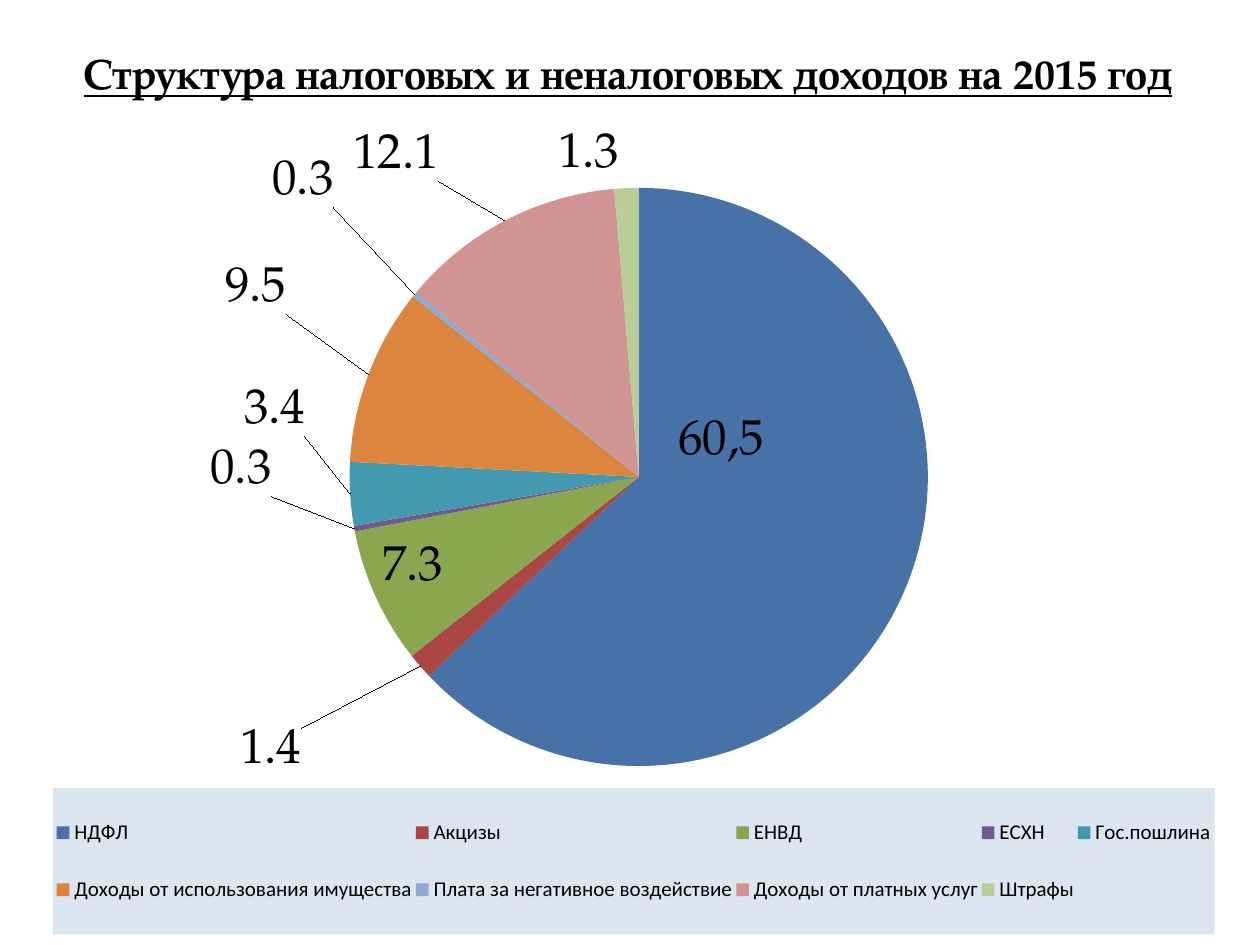
from typing import NamedTuple, Optional

from pptx import Presentation
from pptx.chart.data import CategoryChartData
from pptx.dml.color import RGBColor
from pptx.enum.chart import XL_CHART_TYPE as ChartType
from pptx.enum.chart import XL_LABEL_POSITION as LabelPlace
from pptx.enum.chart import XL_LEGEND_POSITION as LegendPlace
from pptx.enum.text import MSO_ANCHOR as Anchor
from pptx.enum.text import PP_ALIGN as Align
from pptx.oxml import parse_xml
from pptx.oxml.ns import nsdecls, qn
from pptx.util import Inches, Pt

BLACK = RGBColor(0x00, 0x00, 0x00)
BLUE = RGBColor(0x46, 0x72, 0xA8)
RED = RGBColor(0xAA, 0x46, 0x44)
GREEN = RGBColor(0x8A, 0xA6, 0x4F)
PURPLE = RGBColor(0x72, 0x59, 0x90)
TEAL = RGBColor(0x42, 0x99, 0xB0)
ORANGE = RGBColor(0xDC, 0x85, 0x3E)
PALE_BLUE = RGBColor(0x93, 0xA9, 0xD0)
PINK = RGBColor(0xD0, 0x94, 0x93)
PALE_GREEN = RGBColor(0xB9, 0xCD, 0x96)
LEGEND_FILL = RGBColor(0xDC, 0xE6, 0xF1)
SERIF = "TeX Gyre Pagella"
SANS = "Calibri"


class Slice(NamedTuple):
    """One income source; shift moves its label by shares of the chart."""
    name: str
    value: float
    color: RGBColor
    shift: Optional[tuple] = None
    place: LabelPlace = LabelPlace.OUTSIDE_END
    label: Optional[str] = None


SLICES = [
    Slice("НДФЛ", 60.4, BLUE, (-0.04, -0.11), LabelPlace.CENTER, "60,5"),
    Slice("Акцизы", 1.4, RED, (-0.09, 0.07)),
    Slice("ЕНВД", 7.3, GREEN, None, LabelPlace.INSIDE_END),
    Slice("ЕСХН", 0.3, PURPLE, (-0.06, -0.1)),
    Slice("Гос.пошлина", 3.4, TEAL, (-0.03, -0.1)),
    Slice("Доходы от использования имущества", 9.5, ORANGE, (-0.06, -0.07)),
    Slice("Плата за негативное воздействие", 0.3, PALE_BLUE, (-0.06, -0.1)),
    Slice("Доходы от платных услуг", 12.1, PINK, (-0.05, -0.04)),
    Slice("Штрафы", 1.3, PALE_GREEN, (-0.03, 0)),
]


def style_font(font, size: float, name: str) -> None:
    font.size, font.name = Pt(size), name
    font.color.rgb = BLACK


def set_layout(parent, index: int, **settings) -> None:
    """Put a manual layout into a chart part, replacing any other."""
    for old in parent.findall(qn("c:layout")):
        parent.remove(old)
    items = "".join(f'<c:{key} val="{value}"/>' for key, value in settings.items())
    parent.insert(index, parse_xml(
        f'<c:layout {nsdecls("c")}><c:manualLayout>{items}</c:manualLayout></c:layout>'))


def add_title(slide, text: str) -> None:
    box = slide.shapes.add_textbox(Inches(0.16), Inches(0.23), Inches(9.65), Inches(0.69))
    frame = box.text_frame
    frame.word_wrap = True
    frame.vertical_anchor = Anchor.MIDDLE
    para = frame.paragraphs[0]
    para.alignment = Align.CENTER
    span = para.add_run()
    span.text = text
    style_font(span.font, 24, SERIF)
    span.font.bold = span.font.underline = True


def style_slice(series, index: int, item: Slice) -> None:
    point = series.points[index]
    point.format.fill.solid()
    point.format.fill.fore_color.rgb = item.color
    label = point.data_label
    if item.label:
        span = label.text_frame.paragraphs[0].add_run()
        span.text = item.label
        style_font(span.font, 28, SERIF)
    else:
        style_font(label.font, 28, SERIF)
    label.position = item.place
    if item.shift:
        node = series.data_labels._element.findall(qn("c:dLbl"))[index]
        set_layout(node, 1, x=item.shift[0], y=item.shift[1])


def style_legend(chart) -> None:
    chart.has_legend = True
    legend = chart.legend
    legend.position = LegendPlace.BOTTOM
    legend.include_in_layout = False
    style_font(legend.font, 12, SANS)
    node = legend._element
    set_layout(node, 1, xMode="edge", yMode="edge", x=0.042, y=0.809, w=0.922, h=0.178)
    node.find(qn("c:txPr")).addprevious(parse_xml(
        f'<c:spPr {nsdecls("c", "a")}><a:solidFill><a:srgbClr val="{LEGEND_FILL}"/>'
        "</a:solidFill></c:spPr>"))


def add_pie(slide) -> None:
    data = CategoryChartData()
    data.categories = [item.name for item in SLICES]
    data.add_series("Series 1", [item.value for item in SLICES])
    chart = slide.shapes.add_chart(
        ChartType.PIE, 0, Inches(0.99), Inches(10), Inches(6.51), data).chart
    chart.has_title = False
    style_font(chart.font, 18, SANS)
    plot = chart.plots[0]
    plot.vary_by_categories = True
    set_layout(plot._element.getparent(), 0, layoutTarget="inner", xMode="edge",
               yMode="edge", x=0.085, y=0.077, w=0.844, h=0.705)

    # Value labels, moved clear of the pie with leader lines
    series = plot.series[0]
    series.data_labels.show_value = True
    style_font(series.data_labels.font, 28, SERIF)
    for index, item in enumerate(SLICES):
        style_slice(series, index, item)
    style_legend(chart)


def main() -> None:
    deck = Presentation()
    deck.slide_width, deck.slide_height = Inches(10), Inches(7.5)
    slide = deck.slides.add_slide(deck.slide_layouts[6])
    add_title(slide, "Структура налоговых и неналоговых доходов на 2015 год")
    add_pie(slide)
    deck.save("out.pptx")


if __name__ == "__main__":
    main()
